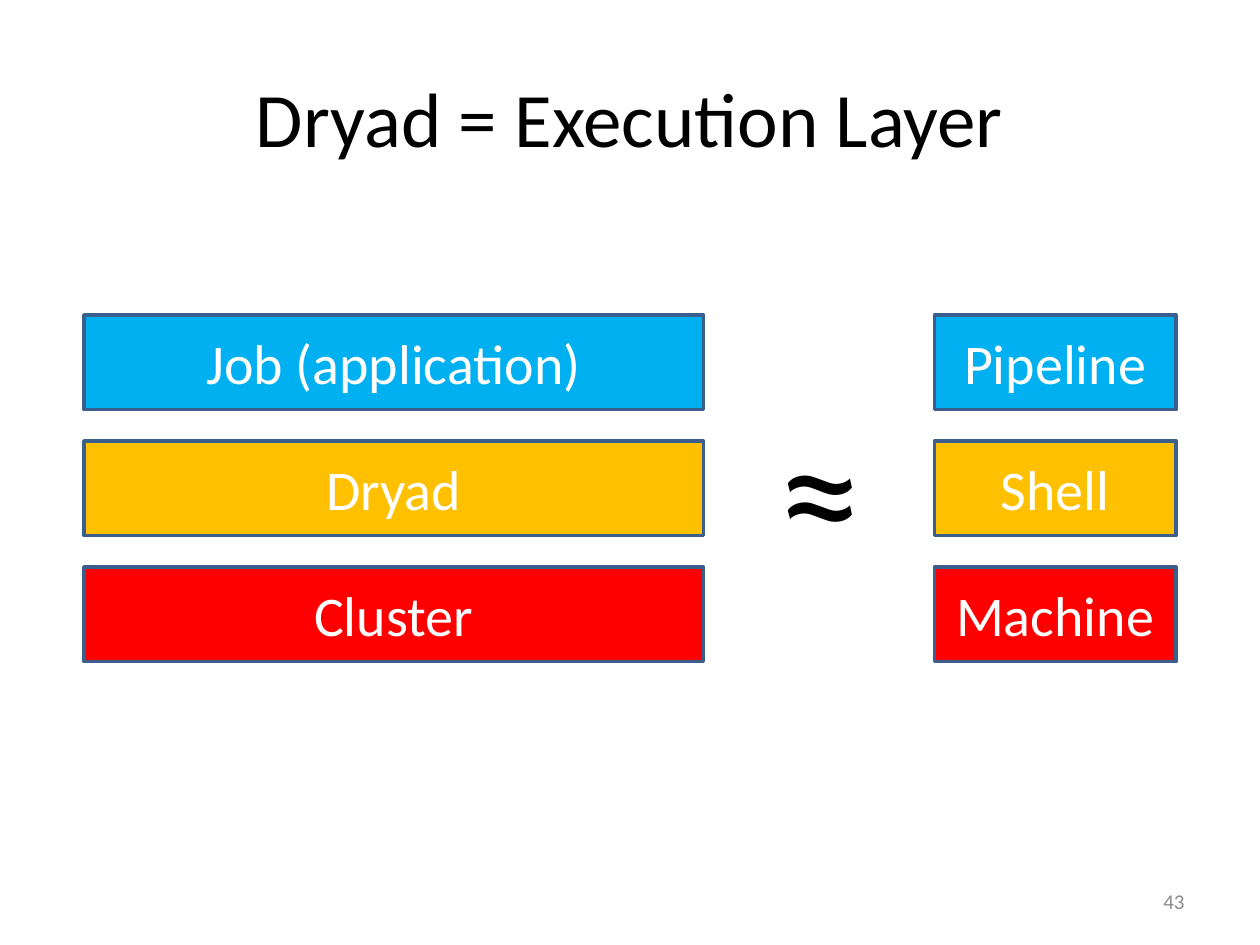
from pptx import Presentation
from pptx.dml.color import RGBColor
from pptx.enum.shapes import MSO_SHAPE
from pptx.enum.text import MSO_ANCHOR, PP_ALIGN
from pptx.util import Pt

RECT = MSO_SHAPE.RECTANGLE
TOP, MIDDLE = MSO_ANCHOR.TOP, MSO_ANCHOR.MIDDLE
LEFT, CENTER, RIGHT = PP_ALIGN.LEFT, PP_ALIGN.CENTER, PP_ALIGN.RIGHT

# Content
COLORS = {"blue": "00B0F0", "gold": "FFC000", "red": "FF0000",
          "edge": "3A5F8C", "white": "FFFFFF", "black": "000000",
          "gray": "8C8C8C"}
LAYERS = ["blue", "gold", "red"]
STACKS = [  # left, width, labels from top to bottom
    (48, 354, ["Job (application)", "Dryad", "Cluster"]),
    (534, 138, ["Pipeline", "Shell", "Machine"]),
]
TEXTS = [  # text, box, size, color, align, anchor
    ("Dryad = Execution Layer", (36, 21.6, 648, 90), 44, "black", CENTER, MIDDLE),
    ("43", (516, 500.5, 168, 28.75), 12, "gray", RIGHT, MIDDLE),
    ("≈", (438, 216, 78, 123.6), 96, "black", LEFT, TOP),
]
FIRST, STEP, HEIGHT = 180, 72, 54


def color(name):
    return RGBColor.from_string(COLORS[name])


def write(shape, text, size, tint, align, anchor):
    frame = shape.text_frame
    frame.text = text
    frame.word_wrap = True
    frame.vertical_anchor = anchor
    line = frame.paragraphs[0]
    line.alignment = align
    font = line.runs[0].font
    font.name, font.size = "Calibri", Pt(size)
    font.color.rgb = color(tint)


deck = Presentation()
deck.slide_width, deck.slide_height = Pt(720), Pt(540)
shapes = deck.slides.add_slide(deck.slide_layouts[6]).shapes

# Title, page number and sign between the stacks
for text, box, *style in TEXTS:
    write(shapes.add_textbox(*map(Pt, box)), text, *style)

# Two stacks of matching layers
for left, width, labels in STACKS:
    for row, (label, fill) in enumerate(zip(labels, LAYERS)):
        box = (left, FIRST + row * STEP, width, HEIGHT)
        layer = shapes.add_shape(RECT, *map(Pt, box))
        layer.shadow.inherit = False
        layer.fill.solid()
        layer.fill.fore_color.rgb = color(fill)
        layer.line.color.rgb = color("edge")
        layer.line.width = Pt(2)
        write(layer, label, 32, "white", CENTER, MIDDLE)

deck.save("out.pptx")
